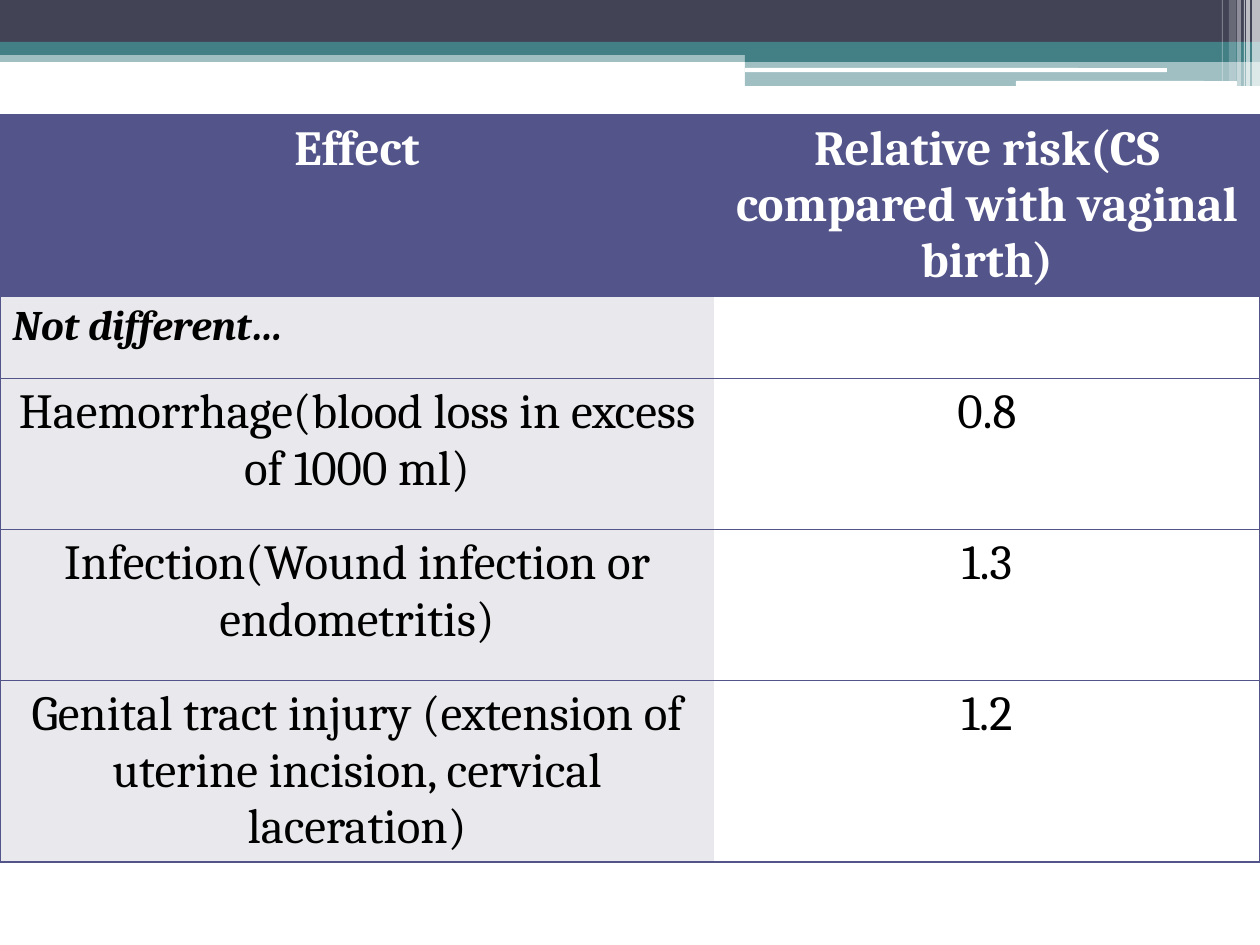
"""Build a slide with a table of effects and their relative risks."""
from dataclasses import dataclass

from lxml import etree
from pptx import Presentation
from pptx.dml.color import RGBColor
from pptx.enum.shapes import MSO_SHAPE
from pptx.enum.text import PP_ALIGN
from pptx.oxml.ns import qn
from pptx.util import Emu, Pt

RECT, ROUNDED = MSO_SHAPE.RECTANGLE, MSO_SHAPE.ROUNDED_RECTANGLE
LEFT, CENTER = PP_ALIGN.LEFT, PP_ALIGN.CENTER
EMU_PER_PX = 914400 / 126
NO_STYLE = "{2D5ABB26-0587-4C30-8999-92F81FD0307C}"


@dataclass(frozen=True)
class Theme:
    font: str = "Cambria"
    dark: str = "424456"
    teal: str = "438086"
    violet: str = "53548A"
    pale: str = "E9E9ED"
    white: str = "FFFFFF"
    black: str = "000000"
    body_size: int = 28
    group_size: int = 24
    border_width: int = 1


def px(length):
    return Emu(round(length * EMU_PER_PX))


def paint(fill, color, opacity=100):
    fill.solid()
    fill.fore_color.rgb = RGBColor.from_string(color)
    if opacity < 100:
        color_xml = next(fill._xPr.iter(qn("a:srgbClr")))
        etree.SubElement(color_xml, qn("a:alpha"), val=str(opacity * 1000))


theme = Theme()
prs = Presentation()
prs.slide_width, prs.slide_height = px(1260), px(945)
slide = prs.slides.add_slide(prs.slide_layouts[6])

bands = [
    (RECT, 0, 50, 1260, 12, theme.teal, 50),
    (RECT, 0, 0, 1260, 43, theme.dark, 100),
    (RECT, 0, 42, 1260, 13, theme.teal, 100),
    (RECT, 745, 49, 515, 13, theme.teal, 100),
    (RECT, 745, 61, 515, 25, theme.teal, 50),
    (ROUNDED, 745, 68, 422, 4, theme.white, 100),
    (ROUNDED, 1016, 81, 221, 5, theme.white, 100),
]
stripes = [
    (1252, 8, 86, 65),
    (1246, 4, 86, 65),
    (1244, 1, 86, 60),
    (1237, 4, 86, 40),
    (1229, 7, 81, 20),
    (1222, 1, 81, 30),
]
bands += [(RECT, left, 0, width, height, theme.white, opacity)
          for left, width, height, opacity in stripes]

for outline, left, top, width, height, color, opacity in bands:
    band = slide.shapes.add_shape(outline, px(left), px(top), px(width), px(height))
    band.shadow.inherit = False
    band.line.fill.background()
    paint(band.fill, color, opacity)

risks = [
    ("Effect", "Relative risk(CS compared with vaginal birth)"),
    ("Not different…", ""),
    ("Haemorrhage(blood loss in excess of 1000 ml)", "0.8"),
    ("Infection(Wound infection or endometritis)", "1.3"),
    ("Genital tract injury (extension of uterine incision, cervical laceration)", "1.2"),
]
column_widths = [714, 546]
row_heights = [154, 82, 151, 151, 181]
HEADER, GROUP = 0, 1

risk_table = slide.shapes.add_table(
    len(risks), len(column_widths), px(0), px(115),
    px(sum(column_widths)), px(sum(row_heights))).table
risk_table._tbl.tblPr.find(qn("a:tableStyleId")).text = NO_STYLE
risk_table.horz_banding = False
for column, width in zip(risk_table.columns, column_widths):
    column.width = px(width)

for row, (entries, height) in enumerate(zip(risks, row_heights)):
    risk_table.rows[row].height = px(height)
    for col, entry in enumerate(entries):
        cell = risk_table.cell(row, col)
        column_fill = theme.white if col else theme.pale
        paint(cell.fill, theme.violet if row == HEADER else column_fill)

        sides = ("a:lnR" if col else "a:lnL", "a:lnT", "a:lnB")
        for position, side in enumerate(sides):
            border = etree.Element(qn(side), w=str(Pt(theme.border_width)))
            border_fill = etree.SubElement(border, qn("a:solidFill"))
            etree.SubElement(border_fill, qn("a:srgbClr"), val=theme.violet)
            cell._tc.tcPr.insert(position, border)

        if entry:
            paragraph = cell.text_frame.paragraphs[0]
            paragraph.alignment = LEFT if row == GROUP else CENTER
            run = paragraph.add_run()
            run.text = entry
            font = run.font
            font.name = theme.font
            font.size = Pt(theme.group_size if row == GROUP else theme.body_size)
            font.bold = row in (HEADER, GROUP)
            font.italic = row == GROUP
            font.color.rgb = RGBColor.from_string(
                theme.white if row == HEADER else theme.black)

prs.save("out.pptx")
